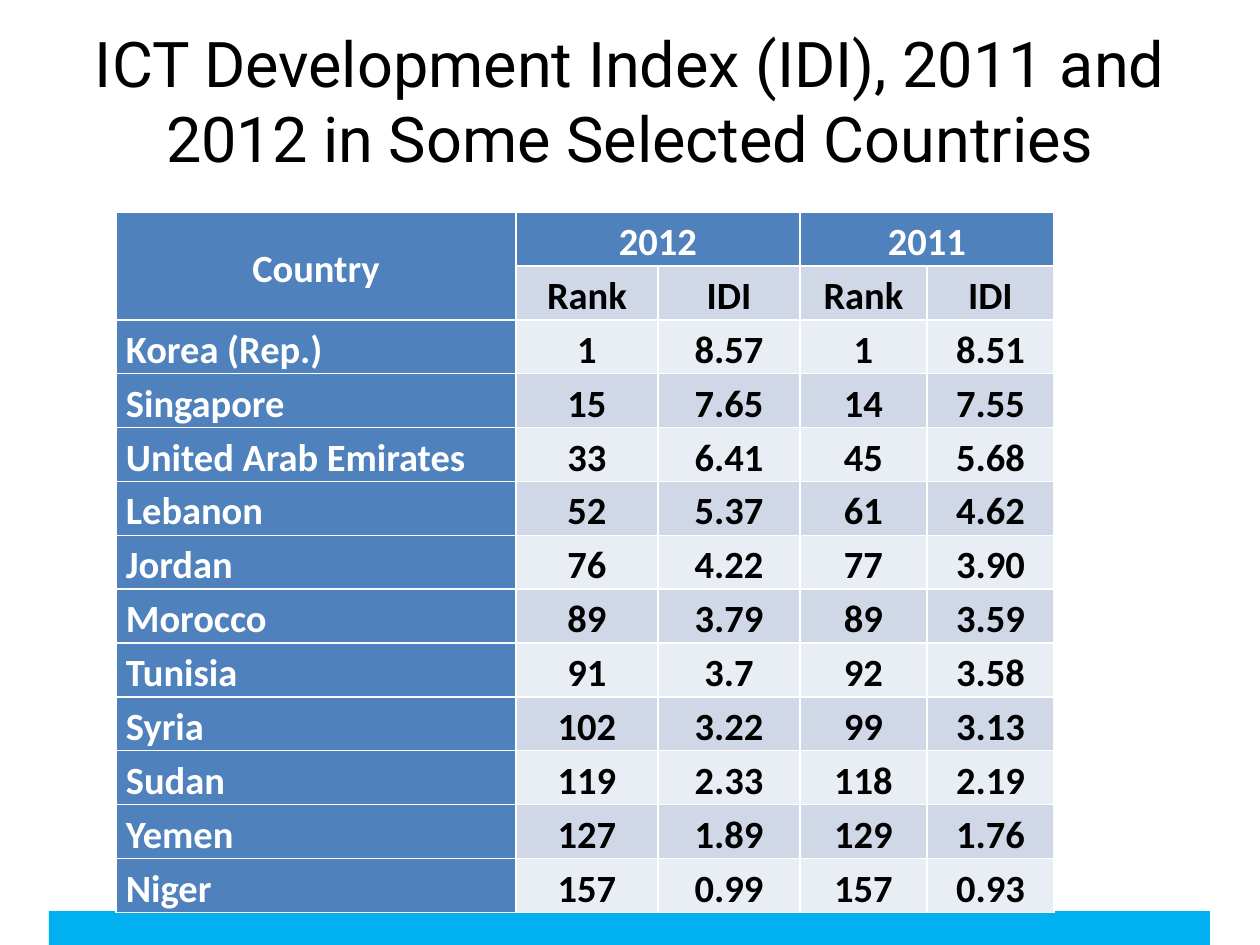
"""Builds a slide with a table of ICT Development Index ranks and scores."""
from dataclasses import dataclass

from lxml import etree
from pptx import Presentation
from pptx.dml.color import RGBColor
from pptx.enum.shapes import MSO_SHAPE
from pptx.enum.text import MSO_ANCHOR, PP_ALIGN
from pptx.oxml.ns import qn
from pptx.util import Emu, Pt

RECTANGLE = MSO_SHAPE.RECTANGLE
CENTER, LEFT = PP_ALIGN.CENTER, PP_ALIGN.LEFT
MIDDLE, TOP = MSO_ANCHOR.MIDDLE, MSO_ANCHOR.TOP


@dataclass(frozen=True)
class Theme:
    header: str = "4F81BD"
    bands: tuple = ("E9EDF4", "D0D8E8")
    footer: str = "00B0F0"
    dark: str = "000000"
    light: str = "FFFFFF"
    title_font: str = "Roboto"
    table_font: str = "Calibri"
    title_size: int = 36
    table_size: int = 22
    border_width: int = 1


THEME = Theme()

INDEX_ROWS = [
    ("Country", "2012", "", "2011", ""),
    ("", "Rank", "IDI", "Rank", "IDI"),
    ("Korea (Rep.)", "1", "8.57", "1", "8.51"),
    ("Singapore", "15", "7.65", "14", "7.55"),
    ("United Arab Emirates", "33", "6.41", "45", "5.68"),
    ("Lebanon", "52", "5.37", "61", "4.62"),
    ("Jordan", "76", "4.22", "77", "3.90"),
    ("Morocco", "89", "3.79", "89", "3.59"),
    ("Tunisia", "91", "3.7", "92", "3.58"),
    ("Syria", "102", "3.22", "99", "3.13"),
    ("Sudan", "119", "2.33", "118", "2.19"),
    ("Yemen", "127", "1.89", "129", "1.76"),
    ("Niger", "157", "0.99", "157", "0.93"),
]
COLUMN_WIDTHS = (400, 142, 142, 127, 127)
ROW_HEIGHT = 53
HEADER_ROWS = 2


def px(length):
    return Emu(round(length * 914400 / 126))


def add_run(paragraph, text, font_name, size, color, bold=False):
    run = paragraph.add_run()
    run.text = text
    run.font.name = font_name
    run.font.size = Pt(size)
    run.font.bold = bold
    run.font.color.rgb = RGBColor.from_string(color)


deck = Presentation()
deck.slide_width, deck.slide_height = px(1260), px(945)
slide = deck.slides.add_slide(deck.slide_layouts[5])

footer = slide.shapes.add_shape(RECTANGLE, px(49), px(911), px(1161), px(34))
footer.shadow.inherit = False
footer.fill.solid()
footer.fill.fore_color.rgb = RGBColor.from_string(THEME.footer)
footer.line.fill.background()

title = slide.shapes.title
title.left, title.top, title.width, title.height = px(63), px(21), px(1134), px(158)
title.text_frame.word_wrap = True
title.text_frame.vertical_anchor = MIDDLE
heading = title.text_frame.paragraphs[0]
heading.alignment = CENTER
add_run(heading, "ICT Development Index (IDI), 2011 and 2012 in Some Selected Countries",
        THEME.title_font, THEME.title_size, THEME.dark)

index_table = slide.shapes.add_table(
    len(INDEX_ROWS), len(COLUMN_WIDTHS), px(116), px(212),
    px(sum(COLUMN_WIDTHS)), px(ROW_HEIGHT * len(INDEX_ROWS))).table
index_table.first_row = index_table.horz_banding = False
for column, width in zip(index_table.columns, COLUMN_WIDTHS):
    column.width = px(width)

for row_number, values in enumerate(INDEX_ROWS):
    index_table.rows[row_number].height = px(ROW_HEIGHT)
    for column_number, value in enumerate(values):
        is_header = row_number == 0 or column_number == 0
        is_country = column_number == 0 and row_number >= HEADER_ROWS
        cell = index_table.cell(row_number, column_number)
        cell.margin_left = cell.margin_right = px(10)
        cell.margin_top = cell.margin_bottom = 0
        cell.vertical_anchor = MIDDLE if row_number < HEADER_ROWS else TOP

        properties = cell._tc.get_or_add_tcPr()
        for side in ("a:lnL", "a:lnR", "a:lnT", "a:lnB"):
            border = etree.SubElement(properties, qn(side), w=str(Pt(THEME.border_width)))
            paint = etree.SubElement(border, qn("a:solidFill"))
            etree.SubElement(paint, qn("a:srgbClr"), val=THEME.light)
        cell.fill.solid()
        cell.fill.fore_color.rgb = RGBColor.from_string(
            THEME.header if is_header else THEME.bands[row_number % 2])

        entry = cell.text_frame.paragraphs[0]
        entry.alignment = LEFT if is_country else CENTER
        entry.line_spacing = 1.15
        if value:
            add_run(entry, value, THEME.table_font, THEME.table_size,
                    THEME.light if is_header else THEME.dark, bold=True)

for first, last in (((0, 0), (1, 0)), ((0, 1), (0, 2)), ((0, 3), (0, 4))):
    index_table.cell(*first).merge(index_table.cell(*last))

deck.save("out.pptx")
